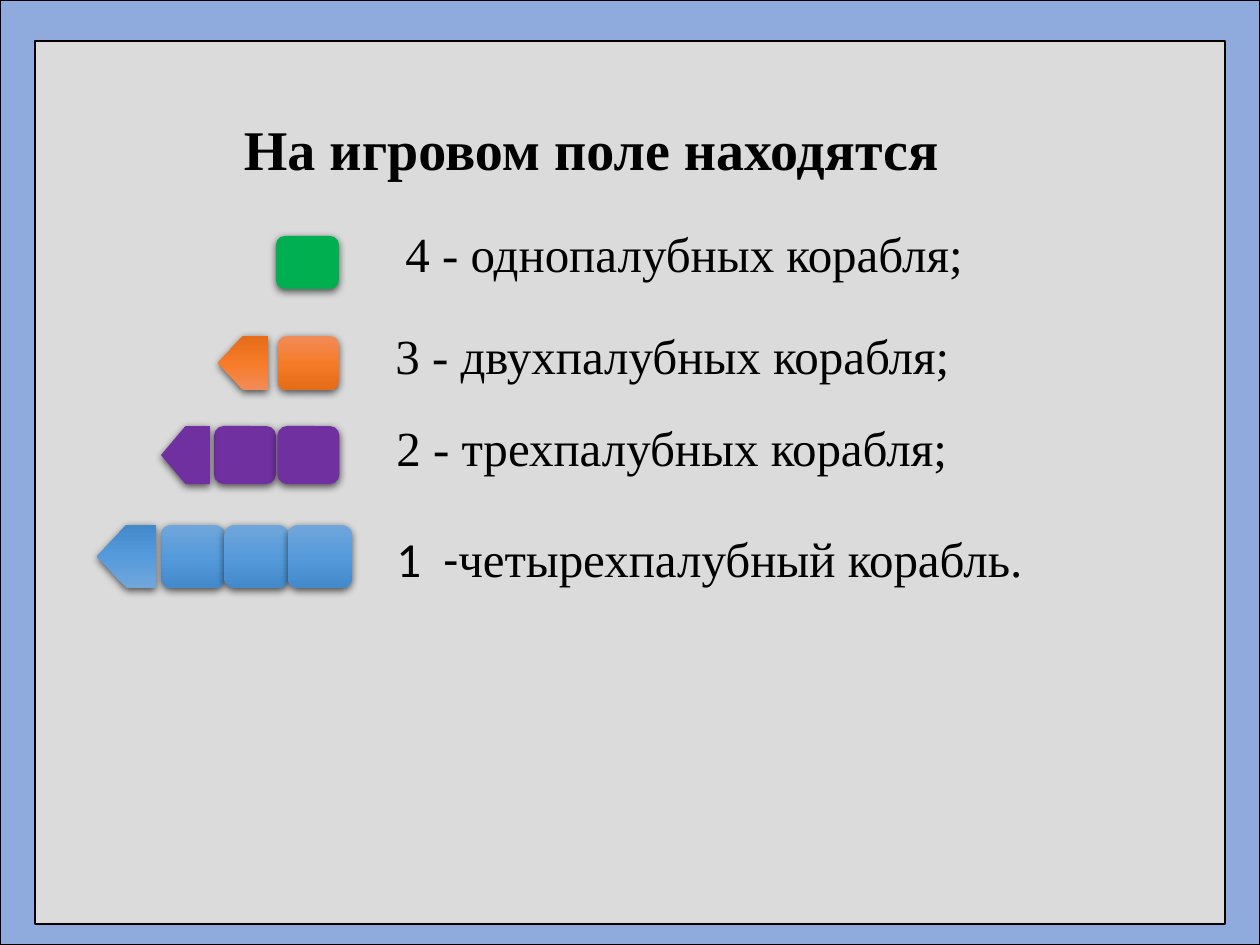
from copy import deepcopy

from lxml.etree import SubElement
from pptx import Presentation
from pptx.dml.color import RGBColor
from pptx.enum.shapes import MSO_SHAPE
from pptx.enum.text import PP_ALIGN
from pptx.oxml.ns import qn
from pptx.util import Emu, Pt

RECTANGLE = MSO_SHAPE.RECTANGLE
DECK_SQUARE = MSO_SHAPE.ROUNDED_RECTANGLE
BOW = MSO_SHAPE.PENTAGON
CENTER = PP_ALIGN.CENTER
LEFT = PP_ALIGN.LEFT
SCALE = 914400 / 126
SERIF = "Times New Roman"
SANS = "Calibri"
COLORS = {
    "black": "000000",
    "frame": "8FAADC",
    "field": "DBDBDB",
    "green": ["00B050"],
    "orange": ["F18C57", "F67B28", "E56C19"],
    "purple": ["7030A0"],
    "blue": ["71A6DB", "559BDB", "448ACA"],
}

deck = Presentation()
deck.slide_width = Emu(round(1260 * SCALE))
deck.slide_height = Emu(round(945 * SCALE))
page = deck.slides.add_slide(deck.slide_layouts[6])


def add_ship_part(kind, place, colors):
    part = page.shapes.add_shape(kind, *[Emu(round(n * SCALE)) for n in place])
    part.line.fill.background()
    if len(colors) == 1:
        part.fill.solid()
        part.fill.fore_color.rgb = RGBColor.from_string(colors[0])
    else:
        part.fill.gradient()
        part.fill.gradient_angle = 270
        stop_list = part._element.spPr.find(".//" + qn("a:gsLst"))
        stop_list.insert(1, deepcopy(stop_list[0]))
        for index, stop in enumerate(part.fill.gradient_stops):
            stop.position = index / 2
            stop.color.rgb = RGBColor.from_string(colors[index])
    part.shadow.inherit = False
    effects = part._element.spPr.find(qn("a:effectLst"))
    shadow = SubElement(effects, qn("a:outerShdw"), blurRad="57150", dist="19050",
                        dir="5400000", algn="ctr", rotWithShape="0")
    shadow_color = SubElement(shadow, qn("a:srgbClr"), val=COLORS["black"])
    SubElement(shadow_color, qn("a:alpha"), val="63000")
    return part


def add_text(place, spans, size, bold=False, align=LEFT):
    box = page.shapes.add_textbox(*[Emu(round(n * SCALE)) for n in place])
    box.text_frame.word_wrap = True
    para = box.text_frame.paragraphs[0]
    para.alignment = align
    for text, font, spacing in spans:
        span = para.add_run()
        span.text = text
        span.font.name = font
        span.font.size = Pt(size)
        span.font.bold = bold
        span.font.color.rgb = RGBColor.from_string(COLORS["black"])
        if spacing:
            span._r.get_or_add_rPr().set("spc", str(spacing))


for place, color in [((0, 0, 1260, 945), "frame"), ((35, 41, 1190, 883), "field")]:
    panel = page.shapes.add_shape(RECTANGLE, *[Emu(round(n * SCALE)) for n in place])
    panel.shadow.inherit = False
    panel.fill.solid()
    panel.fill.fore_color.rgb = RGBColor.from_string(COLORS[color])
    panel.line.color.rgb = RGBColor.from_string(COLORS["black"])
    panel.line.width = Pt(1)

add_text((168, 108, 847, 81), [("На игровом поле находятся", SERIF, 0)], 32, True, CENTER)

ships = [
    ("green", 236, 53, 276, 63, 1, None),
    ("orange", 336, 54, 278, 61, 1, (218, 50)),
    ("purple", 426, 58, 214, 62, 2, (161, 49)),
    ("blue", 525, 63, 161, 64, 3, (97, 59)),
]
for color, top, height, left, width, count, bow in ships:
    for index in range(count):
        square_left = left + index * 63.5
        add_ship_part(DECK_SQUARE, (square_left, top, width, height), COLORS[color])
    if bow:
        bow_part = add_ship_part(BOW, (bow[0], top, bow[1], height), COLORS[color])
        bow_part.rotation = 180

labels = [
    (393, 217, 601, [("4 - однопалубных корабля;", SERIF, 0)]),
    (383, 319, 601, [("3 - двухпалубных корабля;", SERIF, 0)]),
    (384, 411, 601, [("2 - трехпалубных корабля;", SERIF, 0)]),
    (384, 522, 709, [("1", SANS, 0), (" ", SANS, 630), ("-", SANS, 0),
                     ("четырехпалубный корабль.", SERIF, 0)]),
]
for left, top, width, spans in labels:
    add_text((left, top, width, 72), spans, 28)

deck.save("out.pptx")
